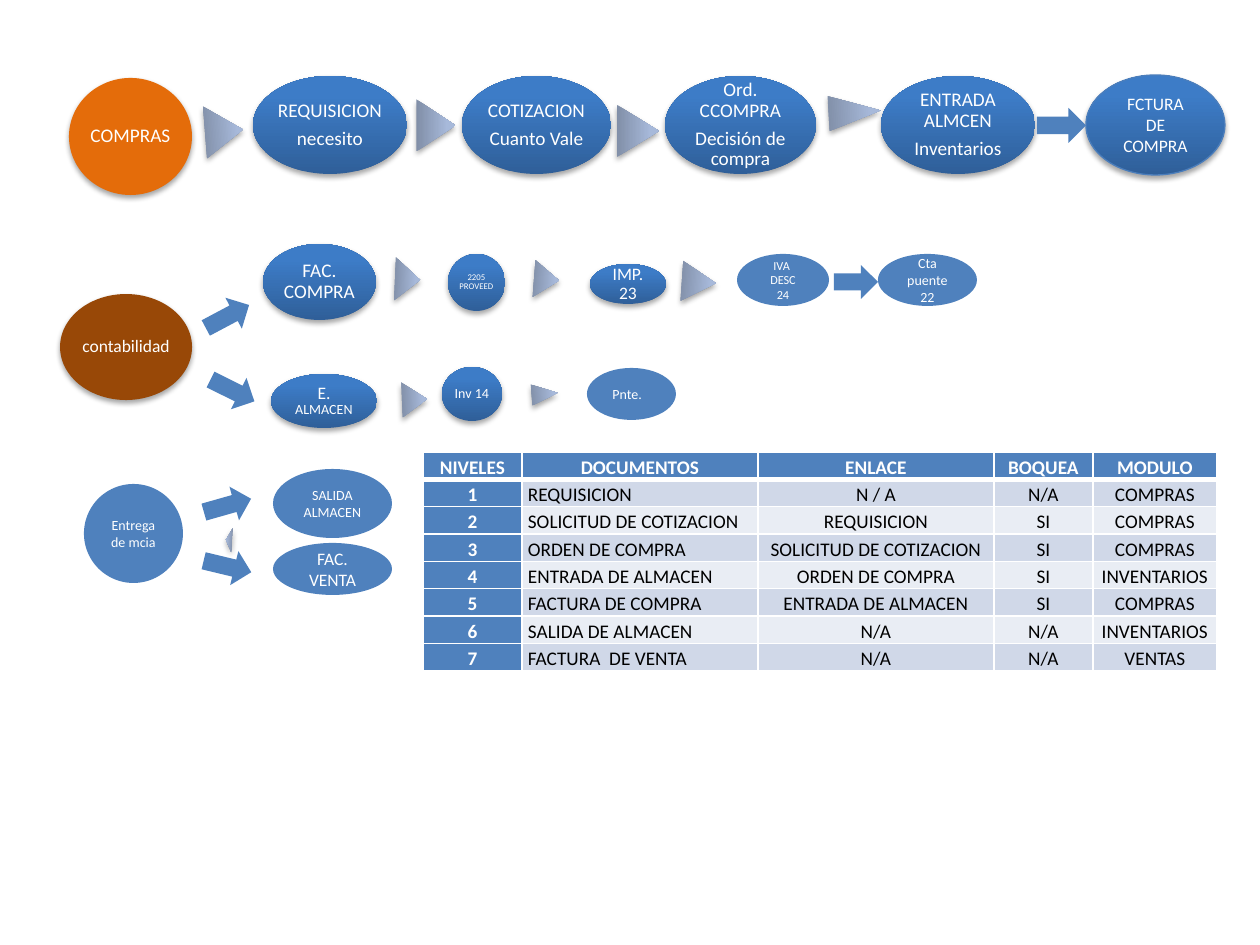
from lxml import etree
from pptx import Presentation
from pptx.dml.color import RGBColor
from pptx.enum.shapes import MSO_SHAPE
from pptx.enum.text import MSO_ANCHOR, PP_ALIGN
from pptx.oxml.ns import qn
from pptx.util import Emu, Pt

OVAL = MSO_SHAPE.OVAL
TRIANGLE = MSO_SHAPE.ISOSCELES_TRIANGLE
ARROW = MSO_SHAPE.RIGHT_ARROW
CENTER, LEFT = PP_ALIGN.CENTER, PP_ALIGN.LEFT
MIDDLE, TOP, BOTTOM = MSO_ANCHOR.MIDDLE, MSO_ANCHOR.TOP, MSO_ANCHOR.BOTTOM

PX = 914400 / 126
FONT = "Calibri"
BLUE, WHITE, BLACK = "4F81BD", "FFFFFF", "000000"
OVAL_GRADIENT = ("2F5F99", "3D7CC7")
TRIANGLE_GRADIENT = ("818FA8", "A7B9DA")
BANDS = ("E9EDF4", "D0D8E8")

# box, lines of (text, size) runs, fill
GLOSSY_OVALS = [
    ((69, 78, 123, 117), [[("COMPRAS", 11)]], "E46C0A"),
    ((253, 76, 154, 98), [[("REQUISICION", 11)], [("necesito", 11)]], OVAL_GRADIENT),
    ((462, 76, 149, 98), [[("COTIZACION", 11)], [("Cuanto Vale", 11)]], OVAL_GRADIENT),
    ((665, 76, 151, 98), [[("Ord. CCOMPRA", 11)], [("Decisión de compra", 11)]], OVAL_GRADIENT),
    ((881, 76, 154, 98), [[("ENTRADA ALMCEN", 11)], [("Inventarios", 11)]], OVAL_GRADIENT),
    ((60, 294, 132, 106), [[("contabilidad", 10)]], "984807"),
    ((263, 244, 113, 76), [[("FAC. COMPRA", 11)]], OVAL_GRADIENT),
    ((448, 254, 57, 57), [[("2205 PROVEED", 5)]], OVAL_GRADIENT),
    ((590, 264, 76, 40), [[("IMP. 23", 10)]], OVAL_GRADIENT),
    ((271, 374, 106, 54), [[("E. ", 10), ("ALMACEN", 8)]], OVAL_GRADIENT),
    ((442, 367, 60, 54), [[("Inv 14", 8)]], OVAL_GRADIENT),
]
# box, text, size, alignment
FLAT_OVALS = [
    ((737, 254, 92, 52), "IVA  DESC 24", 7, CENTER),
    ((878, 254, 99, 52), "Cta puente 22", 8, CENTER),
    ((587, 368, 89, 52), "Pnte.", 8, LEFT),
    ((84, 484, 99, 99), "Entrega de mcia", 8, CENTER),
    ((273, 469, 119, 69), "SALIDA ALMACEN", 8, CENTER),
    ((273, 543, 119, 52), "FAC. VENTA", 10, CENTER),
]
# box before rotation, rotation, flips
TRIANGLES = [
    ((198, 112, 52, 38), 85.5, ""),
    ((410, 106, 52, 39), 270, "V"),
    ((612, 110, 52, 42), 90, ""),
    ((837, 86, 35, 52), 86.6, ""),
    ((386, 267, 43, 25), 272.5, "V"),
    ((528, 267, 37, 25), 94.5, ""),
    ((679, 265, 40, 34), 93.9, "H"),
    ((397, 387, 35, 25), 87.7, ""),
    ((534, 381, 21, 26), 85.3, ""),
    ((217, 537, 24, 6), 93.9, "HV"),
]
ARROWS = [
    ((1037, 108, 49, 35), 0),
    ((834, 265, 44, 34), 0),
    ((203, 299, 49, 35), 332),
    ((208, 373, 49, 35), 26.4),
    ((203, 488, 49, 35), 344.2),
    ((203, 549, 49, 35), 13.5),
]
TABLE_BOX = (423, 452, 794, 213)
COLUMN_WIDTHS = (99, 236, 236, 99, 124)
ROWS = [
    ("NIVELES", "DOCUMENTOS", "ENLACE", "BOQUEA", "MODULO"),
    ("1", "REQUISICION", "N / A", "N/A", "COMPRAS"),
    ("2", "SOLICITUD DE COTIZACION", "REQUISICION", "SI", "COMPRAS"),
    ("3", "ORDEN DE COMPRA", "SOLICITUD DE COTIZACION", "SI", "COMPRAS"),
    ("4", "ENTRADA DE ALMACEN", "ORDEN DE COMPRA", "SI", "INVENTARIOS"),
    ("5", "FACTURA DE COMPRA", "ENTRADA DE ALMACEN", "SI", "COMPRAS"),
    ("6", "SALIDA DE ALMACEN", "N/A", "N/A", "INVENTARIOS"),
    ("7", "FACTURA  DE VENTA", "N/A", "N/A", "VENTAS"),
]


def px(length):
    return Emu(round(length * PX))


def color(value):
    return RGBColor.from_string(value)


def paint(fill, value):
    """Fill with one hex colour, or with a pair running from bottom to top."""
    if isinstance(value, str):
        fill.solid()
        fill.fore_color.rgb = color(value)
        return
    fill.gradient()
    fill.gradient_angle = 90
    for stop, hex_value, position in zip(fill.gradient_stops, value, (0, 0.8)):
        stop.color.rgb = color(hex_value)
        stop.position = position


def add_shadow(shape):
    effects = shape._element.spPr.find(qn("a:effectLst"))
    shadow = etree.SubElement(effects, qn("a:outerShdw"), blurRad=str(Pt(3.1)),
                              dist=str(Pt(1.8)), dir="5400000", rotWithShape="0")
    shade = etree.SubElement(shadow, qn("a:srgbClr"), val=BLACK)
    etree.SubElement(shade, qn("a:alpha"), val="35000")


def add_shape(slide, kind, box, fill, rotation=0, flip="", shadow=False):
    shape = slide.shapes.add_shape(kind, *map(px, box))
    shape.rotation = rotation
    for axis in flip:
        shape._element.spPr.xfrm.set("flip" + axis, "1")
    paint(shape.fill, fill)
    shape.line.fill.background()
    shape.shadow.inherit = False
    if shadow:
        add_shadow(shape)
    return shape


def write(frame, lines, align=CENTER, spacing=1.0, after=0, text_color=WHITE, bold=False):
    """Write one paragraph for each line of (text, size) runs."""
    for index, runs in enumerate(lines):
        paragraph = frame.add_paragraph() if index else frame.paragraphs[0]
        paragraph.alignment = align
        paragraph.line_spacing = spacing
        paragraph.space_after = Pt(after)
        for text, size in runs:
            run = paragraph.add_run()
            run.text = text
            run.font.name = FONT
            run.font.size = Pt(size)
            run.font.bold = bold
            run.font.color.rgb = color(text_color)


def add_oval(slide, box, lines, fill, inset=None, shadow=False, **text_format):
    shape = add_shape(slide, OVAL, box, fill, shadow=shadow)
    frame = shape.text_frame
    frame.word_wrap = True
    frame.vertical_anchor = MIDDLE
    if inset is not None:
        frame.margin_left = frame.margin_right = px(inset)
        frame.margin_top = frame.margin_bottom = px(inset)
    write(frame, lines, **text_format)
    return shape


def add_border(cell, side, width):
    line = etree.SubElement(cell._tc.get_or_add_tcPr(), qn("a:ln" + side), w=str(Pt(width)))
    fill = etree.SubElement(line, qn("a:solidFill"))
    etree.SubElement(fill, qn("a:srgbClr"), val=WHITE)


def format_cell(cell, text, row, column):
    heading = row == 0 or column == 0
    for side in "LRTB":
        under_header = (row, side) in ((0, "B"), (1, "T"))
        add_border(cell, side, 3 if under_header else 1)
    paint(cell.fill, BLUE if heading else BANDS[row % 2])
    cell.margin_left = cell.margin_right = px(6)
    cell.margin_top = cell.margin_bottom = 0
    cell.vertical_anchor = TOP if column == len(COLUMN_WIDTHS) - 1 else BOTTOM
    write(cell.text_frame, [[(text, 11)]], align=LEFT if row and column == 1 else CENTER,
          spacing=1.15, text_color=WHITE if heading else BLACK, bold=heading)


def add_levels_table(slide):
    table = slide.shapes.add_table(len(ROWS), len(COLUMN_WIDTHS), *map(px, TABLE_BOX)).table
    for column, width in zip(table.columns, COLUMN_WIDTHS):
        column.width = px(width)
    for row, texts in enumerate(ROWS):
        table.rows[row].height = px(TABLE_BOX[3] / len(ROWS))
        for column, text in enumerate(texts):
            format_cell(table.cell(row, column), text, row, column)


def main():
    presentation = Presentation()
    presentation.slide_width, presentation.slide_height = px(1260), px(945)
    slide = presentation.slides.add_slide(presentation.slide_layouts[6])

    for box, rotation, flip in TRIANGLES:
        add_shape(slide, TRIANGLE, box, TRIANGLE_GRADIENT, rotation, flip, shadow=True)
    for box, lines, fill in GLOSSY_OVALS:
        add_oval(slide, box, lines, fill, inset=2, shadow=True, spacing=0.9, after=4)
    invoice = add_oval(slide, (1086, 75, 139, 100), [[("FCTURA DE COMPRA", 10)]],
                       OVAL_GRADIENT, shadow=True)
    invoice.line.color.rgb = color("4B7EBC")
    invoice.line.width = Pt(0.75)
    for box, text, size, align in FLAT_OVALS:
        add_oval(slide, box, [[(text, size)]], BLUE, align=align)
    for box, rotation in ARROWS:
        add_shape(slide, ARROW, box, BLUE, rotation)
    add_levels_table(slide)
    presentation.save("out.pptx")


if __name__ == "__main__":
    main()
